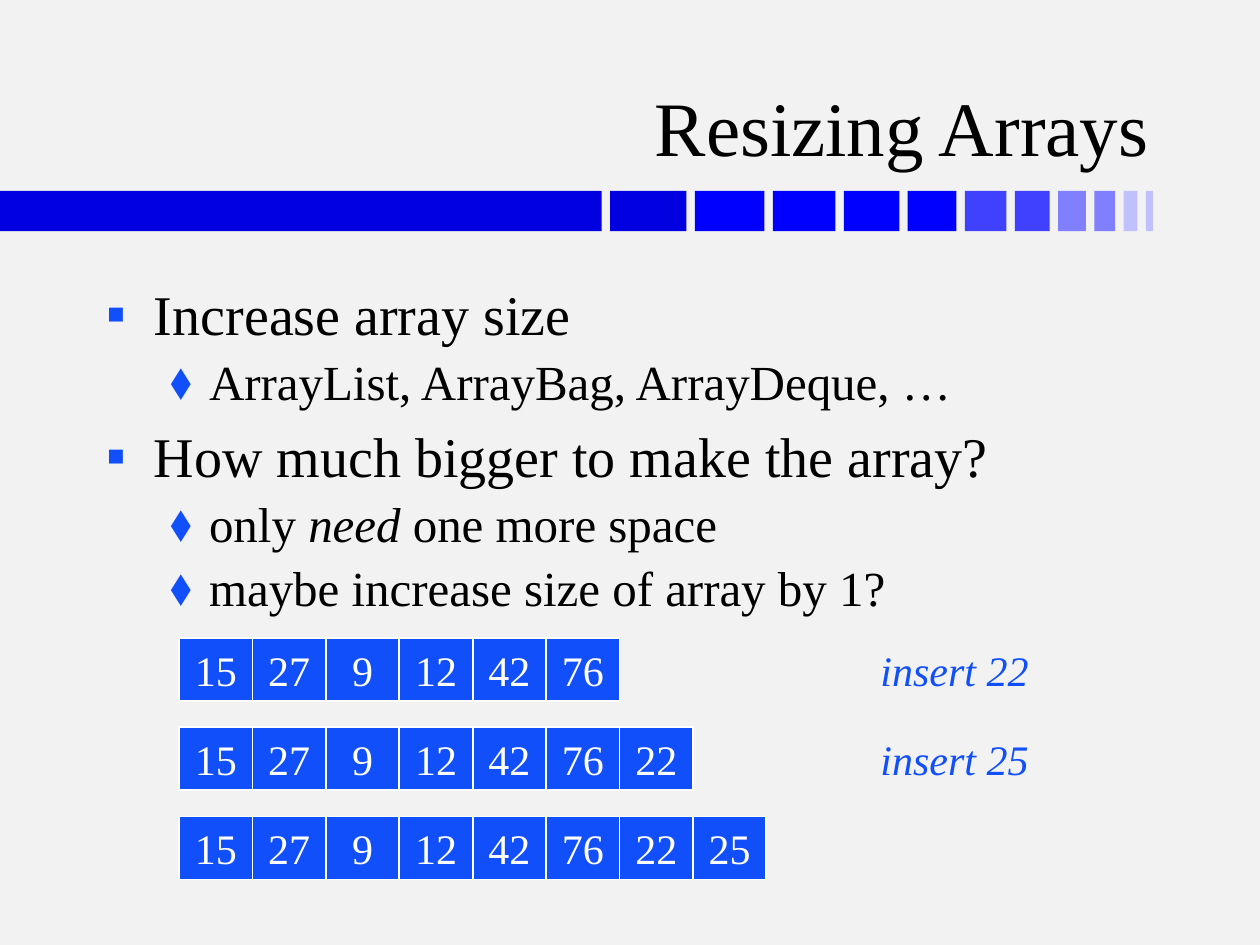
from dataclasses import dataclass

from lxml import etree
from pptx import Presentation
from pptx.dml.color import RGBColor
from pptx.enum.shapes import MSO_SHAPE
from pptx.enum.text import MSO_ANCHOR, MSO_AUTO_SIZE, PP_ALIGN
from pptx.oxml.ns import qn
from pptx.util import Cm, Pt

RECTANGLE = MSO_SHAPE.RECTANGLE
MIDDLE, BOTTOM = MSO_ANCHOR.MIDDLE, MSO_ANCHOR.BOTTOM
CENTER, LEFT, RIGHT = PP_ALIGN.CENTER, PP_ALIGN.LEFT, PP_ALIGN.RIGHT
NO_FIT, GROW = MSO_AUTO_SIZE.NONE, MSO_AUTO_SIZE.SHAPE_TO_FIT_TEXT


@dataclass(frozen=True)
class Theme:
    font: str = "Times New Roman"
    background: str = "F2F2F2"
    text: str = "000000"
    accent: str = "114FFB"
    cell_text: str = "FFFFFF"
    bar: str = "0000E0"
    fading: tuple = ("0000E0", "0000FF", "0000FF", "0000FF", "0000FF", "4040FF",
                     "4040FF", "8080FF", "8080FF", "C0C0FF", "C0C0FF")
    title_size: int = 44
    level_sizes: tuple = (32, 28)
    array_size: int = 24


@dataclass(frozen=True)
class Box:
    """An area in centimetres."""
    left: float
    top: float
    width: float
    height: float

    def lengths(self):
        return Cm(self.left), Cm(self.top), Cm(self.width), Cm(self.height)


@dataclass(frozen=True)
class Level:
    """Bullet style of one list level: lengths in cm, space in percent."""
    bullet: str
    margin: float
    indent: float
    space_before: int


THEME = Theme()
LEVELS = (Level("▪", 0.95, -0.95, 20), Level("⬧", 2.06, -0.79, 10))

# Each point is a level and its runs; a run is its text and whether it is italic
POINTS = (
    (0, [("Increase array size", False)]),
    (1, [("ArrayList, ArrayBag, ArrayDeque, …", False)]),
    (0, [("How much bigger to make the array?", False)]),
    (1, [("only ", False), ("need", True), (" one more space", False)]),
    (1, [("maybe increase size of array by 1?", False)]),
)
START_VALUES = [15, 27, 9, 12, 42, 76]
INSERTED = [22, 25]


def add_run(paragraph, text, size, color, italic=False):
    run = paragraph.add_run()
    run.text = text
    run.font.name = THEME.font
    run.font.size = Pt(size)
    run.font.italic = italic
    run.font.color.rgb = RGBColor.from_string(color)


def add_rectangle(shapes, box, color):
    shape = shapes.add_shape(RECTANGLE, *box.lengths())
    shape.shadow.inherit = False
    shape.fill.solid()
    shape.fill.fore_color.rgb = RGBColor.from_string(color)
    shape.line.fill.background()
    return shape


def place(placeholder, box):
    placeholder.left, placeholder.top, placeholder.width, placeholder.height = box.lengths()
    placeholder.text_frame.auto_size = NO_FIT
    return placeholder.text_frame


def set_bullet(paragraph, level):
    properties = paragraph._p.get_or_add_pPr()
    properties.set("marL", str(Cm(level.margin)))
    properties.set("indent", str(Cm(level.indent)))
    space = etree.SubElement(properties, qn("a:spcBef"))
    etree.SubElement(space, qn("a:spcPct"), val=str(level.space_before * 1000))
    color = etree.SubElement(properties, qn("a:buClr"))
    etree.SubElement(color, qn("a:srgbClr"), val=THEME.accent)
    etree.SubElement(properties, qn("a:buFont"), typeface=THEME.font)
    etree.SubElement(properties, qn("a:buChar"), char=level.bullet)


def add_fading_bar(slide, box, unit=0.14, gap=0.17):
    """A long bar, then blocks that each lose one unit of width."""
    shapes = slide.shapes.add_group_shape().shapes
    count = len(THEME.fading)
    blocks_width = unit * count * (count + 1) / 2 + gap * count
    bar_width = box.width - blocks_width
    add_rectangle(shapes, Box(box.left, box.top, bar_width, box.height), THEME.bar)
    left = box.left + bar_width + gap
    for index, color in enumerate(THEME.fading):
        width = unit * (count - index)
        add_rectangle(shapes, Box(left, box.top, width, box.height), color)
        left += width + gap


def add_title(slide, box, text):
    frame = place(slide.shapes.title, box)
    frame.vertical_anchor = BOTTOM
    paragraph = frame.paragraphs[0]
    paragraph.alignment = RIGHT
    add_run(paragraph, text, THEME.title_size, THEME.text)


def add_points(slide, box, points):
    frame = place(slide.placeholders[1], box)
    for index, (depth, runs) in enumerate(points):
        paragraph = frame.add_paragraph() if index else frame.paragraphs[0]
        paragraph.level = depth
        set_bullet(paragraph, LEVELS[depth])
        for text, italic in runs:
            add_run(paragraph, text, THEME.level_sizes[depth], THEME.text, italic)


def add_array(slide, box, values, cell_width=1.48):
    shapes = slide.shapes.add_group_shape().shapes
    for index, value in enumerate(values):
        cell_box = Box(box.left + index * cell_width, box.top, cell_width, box.height)
        cell = add_rectangle(shapes, cell_box, THEME.accent)
        cell.line.color.rgb = RGBColor.from_string(THEME.cell_text)
        cell.line.width = Pt(1)
        frame = cell.text_frame
        frame.word_wrap = False
        frame.vertical_anchor = MIDDLE
        frame.paragraphs[0].alignment = CENTER
        add_run(frame.paragraphs[0], str(value), THEME.array_size, THEME.cell_text)


def add_label(slide, box, text):
    frame = slide.shapes.add_textbox(*box.lengths()).text_frame
    frame.word_wrap = False
    frame.auto_size = GROW
    frame.paragraphs[0].alignment = LEFT
    add_run(frame.paragraphs[0], text, THEME.array_size, THEME.accent, italic=True)


def add_growing_arrays(slide, box, pitch=1.8, row_height=1.27, label_width=3.53):
    """One row per state of the array, with the next insertion beside it."""
    label_left = box.left + box.width - label_width
    for row in range(len(INSERTED) + 1):
        top = box.top + row * pitch
        add_array(slide, Box(box.left, top, box.width, row_height),
                  START_VALUES + INSERTED[:row])
        if row < len(INSERTED):
            add_label(slide, Box(label_left, top, label_width, row_height),
                      f"insert {INSERTED[row]}")


def main():
    presentation = Presentation()
    presentation.slide_width, presentation.slide_height = Cm(25.4), Cm(19.05)
    slide = presentation.slides.add_slide(presentation.slide_layouts[1])
    slide.background.fill.solid()
    slide.background.fill.fore_color.rgb = RGBColor.from_string(THEME.background)

    add_fading_bar(slide, Box(0, 3.85, 23.24, 0.81))
    add_title(slide, Box(1.88, 0.48, 21.54, 3.12), "Resizing Arrays")
    add_points(slide, Box(1.9, 5.51, 21.6, 11.43), POINTS)
    add_growing_arrays(slide, Box(3.61, 12.86, 17.42, 4.87))
    presentation.save("out.pptx")


if __name__ == "__main__":
    main()
